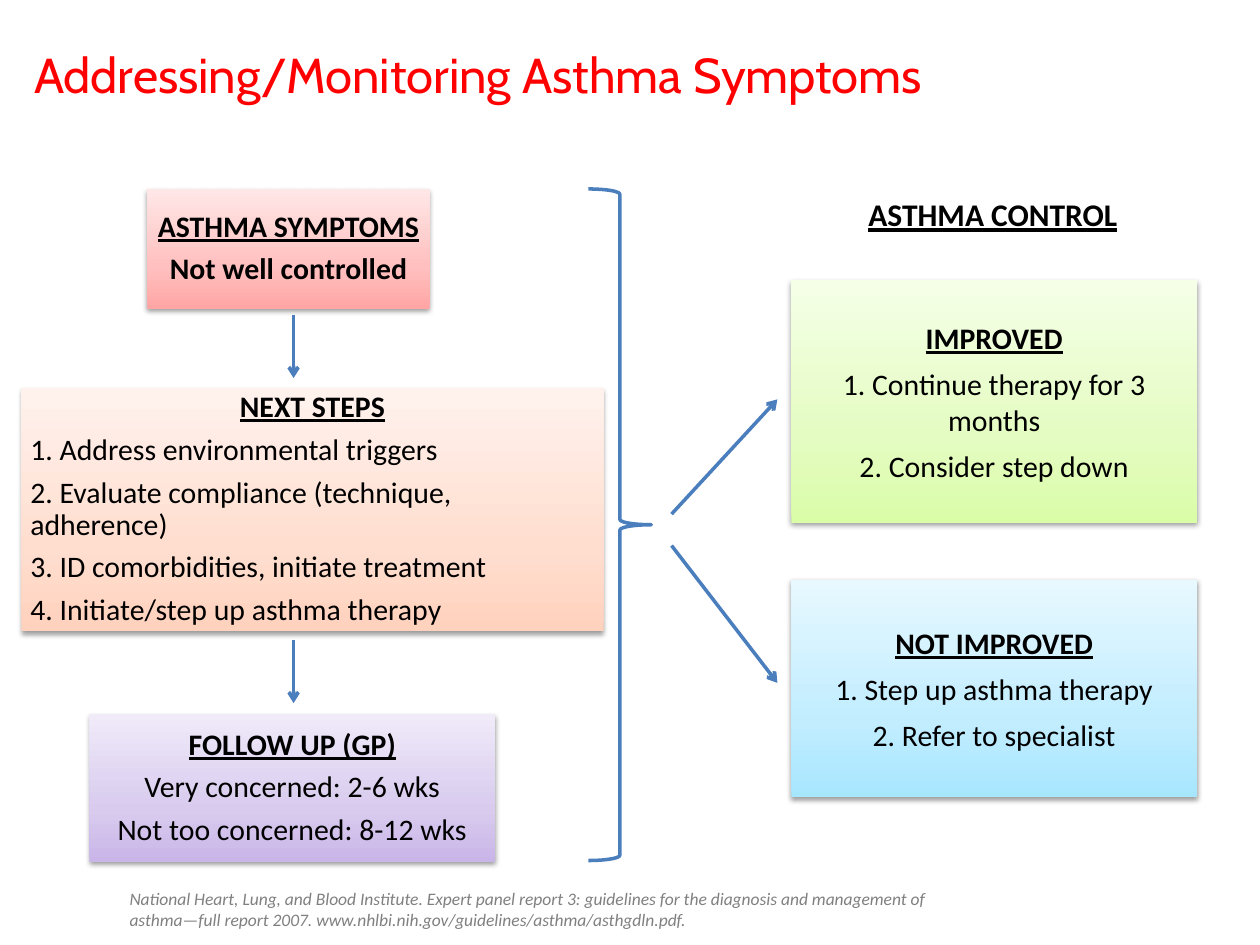
"""Build the asthma symptom monitoring flowchart slide."""
from copy import deepcopy
from dataclasses import dataclass

from lxml.etree import SubElement
from pptx import Presentation
from pptx.dml.color import RGBColor
from pptx.enum.shapes import MSO_CONNECTOR as Connector, MSO_SHAPE as Shape
from pptx.enum.text import MSO_ANCHOR as Anchor, MSO_AUTO_SIZE as AutoSize, PP_ALIGN as Align
from pptx.oxml.ns import qn
from pptx.util import Inches, Pt

RED = RGBColor(0xFF, 0x00, 0x00)
BLACK = RGBColor(0x00, 0x00, 0x00)
GRAY = RGBColor(0x80, 0x80, 0x80)
BLUE = RGBColor(0x4B, 0x7E, 0xBC)
ROSE_STOPS = RGBColor(0xFF, 0xA6, 0xA5), RGBColor(0xFF, 0xC0, 0xBF), RGBColor(0xFF, 0xE7, 0xE7)
PEACH_STOPS = RGBColor(0xFF, 0xD2, 0xBD), RGBColor(0xFF, 0xDE, 0xD0), RGBColor(0xFF, 0xF2, 0xED)
VIOLET_STOPS = RGBColor(0xC9, 0xB5, 0xE8), RGBColor(0xD8, 0xCB, 0xEE), RGBColor(0xF0, 0xEA, 0xF9)
GREEN_STOPS = RGBColor(0xDA, 0xFD, 0xA7), RGBColor(0xE4, 0xFC, 0xC2), RGBColor(0xF5, 0xFF, 0xE7)
SKY_STOPS = RGBColor(0xA7, 0xE6, 0xFF), RGBColor(0xC1, 0xED, 0xFF), RGBColor(0xE7, 0xF8, 0xFF)
STOP_POSITIONS = (0, 0.35, 1)


@dataclass
class Card:
    area: tuple[float, float, float, float]
    stops: tuple[RGBColor, RGBColor, RGBColor]
    heading: str
    lines: list[str]
    align: Align = Align.CENTER
    spacing: float = 0.9
    bold_lines: bool = False


@dataclass
class Arrow:
    start: tuple[float, float]
    end: tuple[float, float]


CARDS = [
    Card((1.17, 1.5, 2.24, 0.95), ROSE_STOPS, "ASTHMA SYMPTOMS",
         ["Not well controlled"], bold_lines=True),
    Card((6.28, 2.22, 3.22, 1.93), GREEN_STOPS, "IMPROVED",
         ["1. Continue therapy for 3 months", "2. Consider step down"], spacing=1.0),
    Card((0.71, 5.67, 3.22, 1.17), VIOLET_STOPS, "FOLLOW UP (GP)",
         ["Very concerned: 2-6 wks", "Not too concerned: 8-12 wks"]),
    Card((6.28, 4.6, 3.22, 1.73), SKY_STOPS, "NOT IMPROVED",
         ["1. Step up asthma therapy", "2. Refer to specialist"], spacing=1.0),
    Card((0.17, 3.08, 4.62, 1.93), PEACH_STOPS, "NEXT STEPS",
         ["1. Address environmental triggers",
          "2. Evaluate compliance (technique, adherence)",
          "3. ID comorbidities, initiate treatment",
          "4. Initiate/step up asthma therapy"], align=Align.LEFT),
]
ARROWS = [
    Arrow((2.33, 2.5), (2.33, 3)),
    Arrow((2.33, 5.08), (2.33, 5.58)),
    Arrow((5.33, 4.08), (6.17, 3.17)),
    Arrow((5.33, 4.33), (6.17, 5.42)),
]


def style_text(para, size: float, color: RGBColor, name: str = "Calibri",
               bold: bool = False, underline: bool = False, italic: bool = False) -> None:
    for span in para.runs:
        font = span.font
        font.name, font.size, font.color.rgb = name, Pt(size), color
        font.bold, font.underline, font.italic = bold, underline, italic


def apply_gradient(shape, colors: tuple) -> None:
    shape.fill.gradient()
    shape.fill.gradient_angle = 90
    stop_list = shape.element.spPr.find(".//" + qn("a:gsLst"))
    stop_list.append(deepcopy(stop_list[-1]))
    for stop, color, position in zip(shape.fill.gradient_stops, colors, STOP_POSITIONS):
        stop.color.rgb = color
        stop.position = position


def apply_shadow(shape) -> None:
    shape.shadow.inherit = False
    effects = shape.element.spPr.find(qn("a:effectLst"))
    shadow = SubElement(effects, qn("a:outerShdw"), blurRad=str(Pt(3.1)), dist=str(Pt(1.6)),
                        dir="5400000", rotWithShape="0")
    color = SubElement(shadow, qn("a:srgbClr"), val=str(BLACK))
    SubElement(color, qn("a:alpha"), val="38000")


def draw_card(page, card: Card) -> None:
    box = page.shapes.add_shape(Shape.RECTANGLE, *map(Inches, card.area))
    apply_gradient(box, card.stops)
    box.line.fill.background()
    apply_shadow(box)
    frame = box.text_frame
    frame.word_wrap = True
    frame.vertical_anchor = Anchor.MIDDLE
    frame.margin_left = frame.margin_right = Inches(0.07)
    frame.margin_top = frame.margin_bottom = Inches(0.07)
    frame.text = "\n".join([card.heading, *card.lines])
    for index, para in enumerate(frame.paragraphs):
        is_heading = index == 0
        para.alignment = Align.CENTER if is_heading else card.align
        para.line_spacing = card.spacing
        para.space_after = Pt(6)
        style_text(para, 17, BLACK, bold=is_heading or card.bold_lines, underline=is_heading)


def draw_arrow(page, arrow: Arrow) -> None:
    link = page.shapes.add_connector(Connector.STRAIGHT, *map(Inches, arrow.start + arrow.end))
    link.line.color.rgb = BLUE
    link.line.width = Pt(2)
    properties = link.element.spPr
    SubElement(properties.find(qn("a:ln")), qn("a:tailEnd"), type="arrow")
    SubElement(properties, qn("a:effectLst"))


def draw_brace(page) -> None:
    brace = page.shapes.add_shape(Shape.RIGHT_BRACE, *map(Inches, (4.67, 1.5, 0.5, 5.33)))
    brace.fill.background()
    brace.line.color.rgb = BLUE
    brace.line.width = Pt(2)
    brace.shadow.inherit = False


def draw_label(page, area: tuple, text: str, align: Align, size: float,
               color: RGBColor, **style: bool) -> None:
    box = page.shapes.add_textbox(*map(Inches, area))
    frame = box.text_frame
    frame.word_wrap = True
    frame.auto_size = AutoSize.SHAPE_TO_FIT_TEXT
    frame.text = text
    para = frame.paragraphs[0]
    para.alignment = align
    style_text(para, size, color, **style)


def draw_title(page) -> None:
    title = page.shapes.title
    title.left, title.top, title.width, title.height = map(Inches, (0.17, 0.3, 9.67, 1.25))
    frame = title.text_frame
    frame.text = "Addressing/Monitoring Asthma Symptoms"
    frame.vertical_anchor = Anchor.TOP
    frame.paragraphs[0].alignment = Align.LEFT
    style_text(frame.paragraphs[0], 28, RED, "Cabin")


def main() -> None:
    deck = Presentation()
    deck.slide_width, deck.slide_height = Inches(10), Inches(7.5)
    page = deck.slides.add_slide(deck.slide_layouts.get_by_name("Title Only"))
    draw_title(page)
    for card in CARDS:
        draw_card(page, card)
    draw_brace(page)
    for arrow in ARROWS:
        draw_arrow(page, arrow)
    draw_label(page, (6.42, 1.5, 2.92, 0.4), "ASTHMA CONTROL", Align.CENTER, 18, BLACK,
               bold=True, underline=True)
    draw_label(page, (0.93, 7, 6.83, 0.44),
               "National Heart, Lung, and Blood Institute. Expert panel report 3: guidelines for "
               "the diagnosis and management of asthma—full report 2007. "
               "www.nhlbi.nih.gov/guidelines/asthma/asthgdln.pdf.",
               Align.LEFT, 10, GRAY, italic=True)
    deck.save("out.pptx")


if __name__ == "__main__":
    main()
